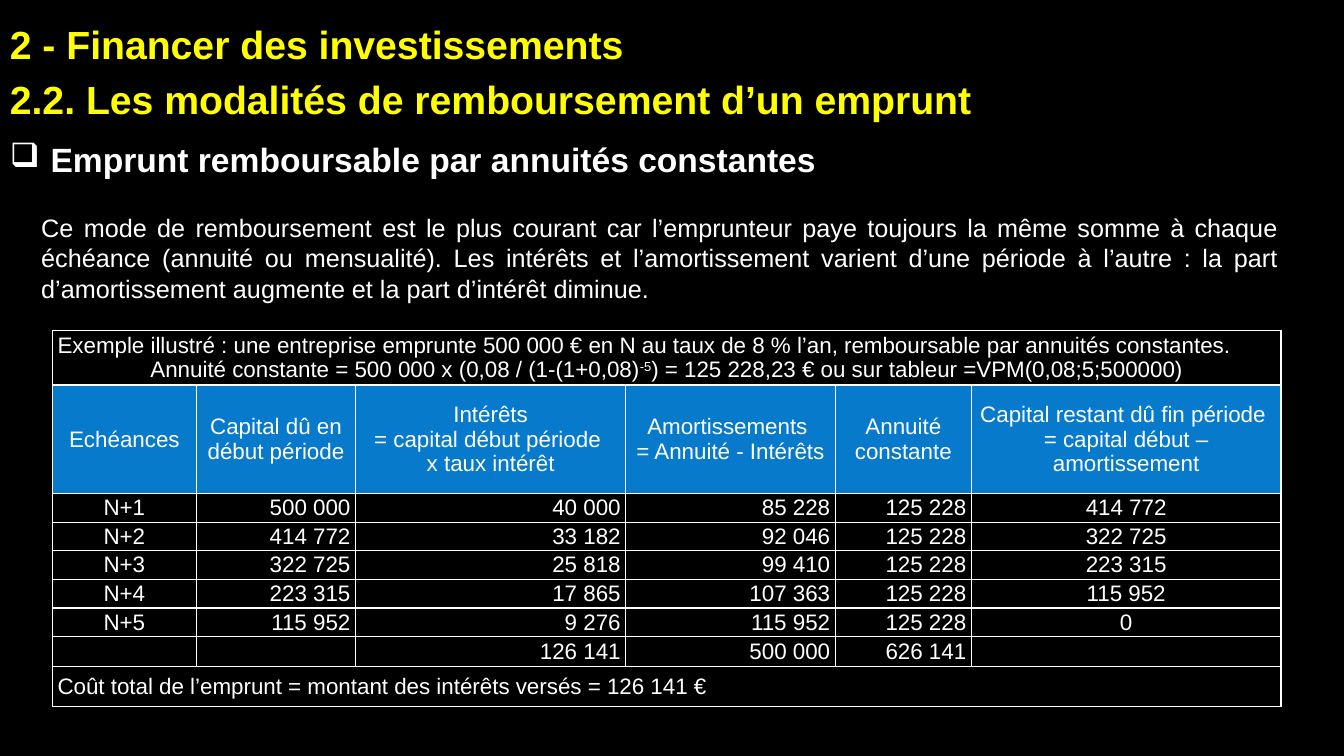
"""Build the slide on loans repaid in constant annuities."""
from dataclasses import dataclass
from typing import Optional

import lxml.etree
import pptx
import pptx.dml.color
import pptx.enum.text
import pptx.oxml.ns
import pptx.util

Cm = pptx.util.Cm
Pt = pptx.util.Pt
Align = pptx.enum.text.PP_ALIGN
qn = pptx.oxml.ns.qn


@dataclass(frozen=True)
class Theme:
    font: str = "Arial"
    background: str = "000000"
    text: str = "FFFFFF"
    title: str = "FFFF00"
    header: str = "077ACC"
    title_size: int = 28
    subtitle_size: int = 24
    body_size: int = 18
    table_size: int = 16


THEME = Theme()


@dataclass(frozen=True)
class Line:
    wording: tuple[str, ...]
    size: int = THEME.table_size
    color: str = THEME.text
    bold: bool = False
    align: Align = Align.LEFT
    before: int = 0
    after: int = 0
    bullet: str = ""
    raised: int = -1


@dataclass(frozen=True)
class Box:
    left: float
    top: float
    width: float
    height: float
    lines: tuple[Line, ...]


HEADING = Box(0, 0.38, 30.76, 4.32, (
    Line(("2 - Financer des investissements",), THEME.title_size, THEME.title, True,
         before=12, after=6),
    Line(("2.2. Les modalités de remboursement d’un emprunt",), THEME.title_size,
         THEME.title, True, after=6),
    Line((" Emprunt remboursable par annuités constantes",), THEME.subtitle_size,
         bold=True, before=6, after=6, bullet="❑"),
))
EXPLANATION = Box(0.79, 5.23, 31.67, 2.57, (
    Line(("Ce mode de remboursement est le plus courant car l’emprunteur paye toujours "
          "la même somme à chaque échéance (annuité ou mensualité). Les intérêts et "
          "l’amortissement varient d’une période à l’autre : la part d’amortissement "
          "augmente et la part d’intérêt diminue.",), THEME.body_size,
         align=Align.JUSTIFY, before=6, after=6),
))
EXAMPLE = (
    Line(("Exemple illustré : une entreprise emprunte 500 000 € en N au taux de 8 % l’an, "
          "remboursable par annuités constantes.",)),
    Line(("Annuité constante = 500 000 x (0,08 / (1-(1+0,08)", "-5",
          ") = 125 228,23 € ou sur tableur =VPM(0,08;5;500000)"),
         align=Align.CENTER, raised=1),
)
TOTAL_COST = (Line(("Coût total de l’emprunt = montant des intérêts versés = 126 141 €",)),)
HEADERS = (
    ("Echéances",),
    ("Capital dû en début période",),
    ("Intérêts", "= capital début période ", "x taux intérêt"),
    ("Amortissements ", "= Annuité - Intérêts"),
    ("Annuité constante",),
    ("Capital restant dû fin période ", "= capital début – amortissement"),
)
SCHEDULE = (
    ("N+1", "500 000", "40 000", "85 228", "125 228", "414 772"),
    ("N+2", "414 772", "33 182", "92 046", "125 228", "322 725"),
    ("N+3", "322 725", "25 818", "99 410", "125 228", "223 315"),
    ("N+4", "223 315", "17 865", "107 363", "125 228", "115 952"),
    ("N+5", "115 952", "9 276", "115 952", "125 228", "0"),
    ("", "", "126 141", "500 000", "626 141", ""),
)
COLUMN_WIDTHS = (3.63, 4.01, 6.81, 5.28, 3.43, 7.8)
COLUMN_ALIGNS = (Align.CENTER, *[Align.RIGHT] * 4, Align.CENTER)
ROW_HEIGHTS = (1.37, 2.74, *[0.72] * len(SCHEDULE), 0.99)


def rgb(color: str) -> pptx.dml.color.RGBColor:
    """Turn a hex string into a colour."""
    return pptx.dml.color.RGBColor.from_string(color)


def write_lines(frame, lines: tuple[Line, ...]) -> None:
    """Write each line as a paragraph, run by run."""
    for index, line in enumerate(lines):
        paragraph = frame.add_paragraph() if index else frame.paragraphs[0]
        paragraph.alignment = line.align
        paragraph.space_before = Pt(line.before)
        paragraph.space_after = Pt(line.after)
        if line.bullet:
            properties = paragraph._p.get_or_add_pPr()
            properties.set("marL", str(Cm(0.79)))
            properties.set("indent", str(-Cm(0.79)))
            bullet = lxml.etree.SubElement(properties, qn("a:buChar"))
            bullet.set("char", line.bullet)
        for position, words in enumerate(line.wording):
            run = paragraph.add_run()
            run.text = words
            run.font.name = THEME.font
            run.font.size = Pt(line.size)
            run.font.bold = line.bold
            run.font.color.rgb = rgb(line.color)
            if position == line.raised:
                run._r.get_or_add_rPr().set("baseline", "30000")


def add_box(slide, box: Box) -> None:
    """Add a wrapped text box."""
    frame = slide.shapes.add_textbox(
        Cm(box.left), Cm(box.top), Cm(box.width), Cm(box.height)).text_frame
    frame.word_wrap = True
    frame.auto_size = pptx.enum.text.MSO_AUTO_SIZE.SHAPE_TO_FIT_TEXT
    write_lines(frame, box.lines)


def style_cell(cell, fill: Optional[str] = None) -> None:
    """Set the margins, borders and fill of a cell."""
    cell.margin_left = cell.margin_right = Cm(0.13)
    cell.margin_top = cell.margin_bottom = 0
    cell.vertical_anchor = pptx.enum.text.MSO_ANCHOR.MIDDLE
    properties = cell._tc.get_or_add_tcPr()
    for side in ("a:lnL", "a:lnR", "a:lnT", "a:lnB"):
        border = lxml.etree.SubElement(properties, qn(side), w=str(Pt(1)))
        paint = lxml.etree.SubElement(border, qn("a:solidFill"))
        lxml.etree.SubElement(paint, qn("a:srgbClr"), val=THEME.text)
    if fill:
        cell.fill.solid()
        cell.fill.fore_color.rgb = rgb(fill)
    else:
        cell.fill.background()


def add_schedule(slide) -> None:
    """Add the repayment table."""
    schedule = slide.shapes.add_table(
        len(ROW_HEIGHTS), len(COLUMN_WIDTHS), Cm(1.32), Cm(8.33),
        Cm(sum(COLUMN_WIDTHS)), Cm(sum(ROW_HEIGHTS))).table
    schedule.first_row = schedule.horz_banding = False
    for column, width in zip(schedule.columns, COLUMN_WIDTHS):
        column.width = Cm(width)
    for index, (row, height) in enumerate(zip(schedule.rows, ROW_HEIGHTS)):
        row.height = Cm(height)
        for cell in row.cells:
            style_cell(cell, THEME.header if index == 1 else None)
    last_row, last_column = len(ROW_HEIGHTS) - 1, len(COLUMN_WIDTHS) - 1
    for index, lines in ((0, EXAMPLE), (last_row, TOTAL_COST)):
        schedule.cell(index, 0).merge(schedule.cell(index, last_column))
        write_lines(schedule.cell(index, 0).text_frame, lines)
    for column, header in enumerate(HEADERS):
        write_lines(schedule.cell(1, column).text_frame,
                    tuple(Line((text,), align=Align.CENTER) for text in header))
    for index, values in enumerate(SCHEDULE, start=2):
        for column, (value, align) in enumerate(zip(values, COLUMN_ALIGNS)):
            write_lines(schedule.cell(index, column).text_frame,
                        (Line((value,), align=align),))


def main() -> None:
    """Build and save the slide."""
    presentation = pptx.Presentation()
    presentation.slide_width, presentation.slide_height = Cm(33.87), Cm(19.05)
    slide = presentation.slides.add_slide(presentation.slide_layouts[6])
    slide.background.fill.solid()
    slide.background.fill.fore_color.rgb = rgb(THEME.background)
    add_box(slide, HEADING)
    add_box(slide, EXPLANATION)
    add_schedule(slide)
    presentation.save("out.pptx")


if __name__ == "__main__":
    main()
